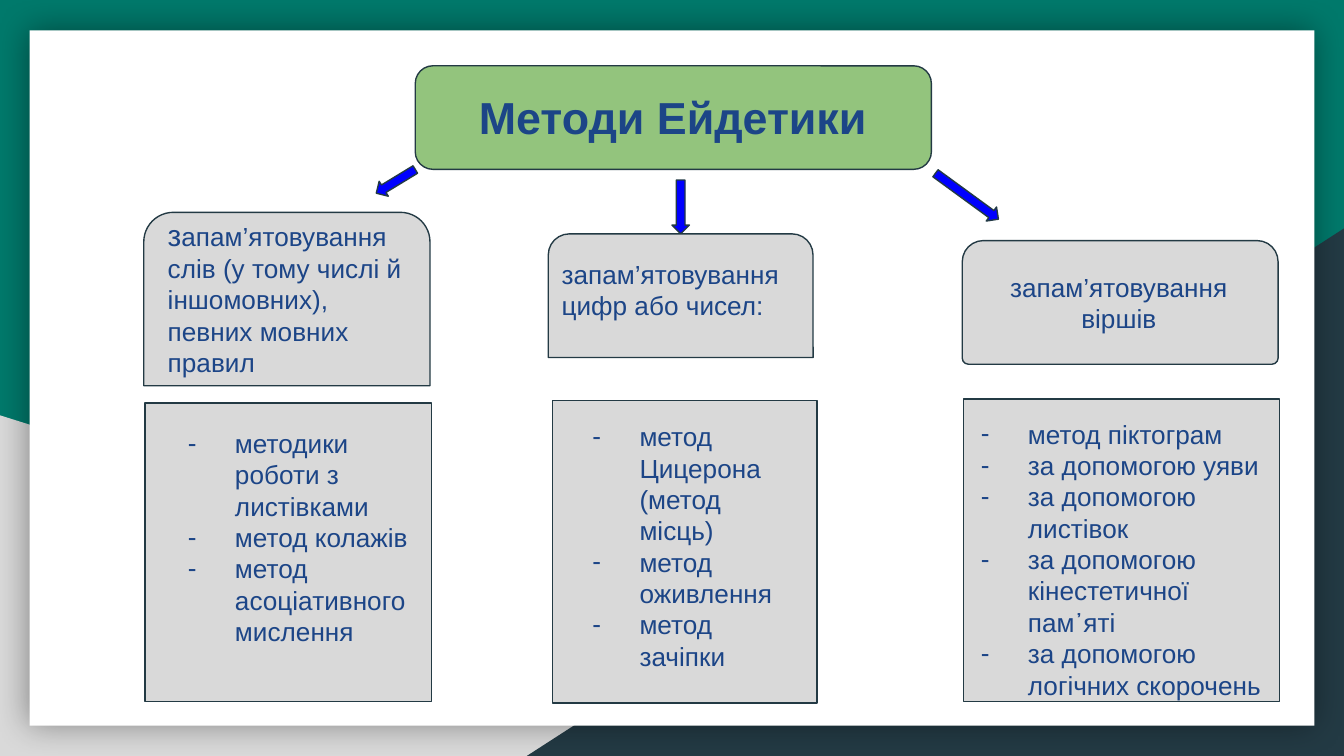
from dataclasses import dataclass

from lxml import etree
from pptx import Presentation
from pptx import util as u
from pptx.dml.color import RGBColor
from pptx.enum import shapes, text
from pptx.oxml.ns import qn


@dataclass(frozen=True)
class Theme:
    back: str = "00796B"
    dark: str = "233A44"
    gray: str = "D9D9D9"
    page: str = "FFFFFF"
    head: str = "93C47D"
    arrow: str = "0000FF"
    ink: str = "1C4587"
    font: str = "Arial"
    title: int = 24
    big: int = 16
    body: int = 14
    edge: float = 0.75


look = Theme()
kind = shapes.MSO_SHAPE
left, mid = text.PP_ALIGN.LEFT, text.PP_ALIGN.CENTER

deck = Presentation()
deck.slide_width = u.Inches(10)
deck.slide_height = deck.slide_width * 9 // 16
cell = deck.slide_width / 100  # square grid, 100 columns wide
slide = deck.slides.add_slide(deck.slide_layouts[6])
slide.background.fill.solid()
slide.background.fill.fore_color.rgb = RGBColor.from_string(look.back)


def draw(form, area, fill, edge=True, adj=(), turn=0):
    """Add a filled shape; area is column, row, columns, rows."""
    shape = slide.shapes.add_shape(form, *(round(n * cell) for n in area))
    shape.shadow.inherit = False
    shape.fill.solid()
    shape.fill.fore_color.rgb = RGBColor.from_string(fill)
    if edge:
        shape.line.color.rgb = RGBColor.from_string(look.dark)
        shape.line.width = u.Pt(look.edge)
    else:
        shape.line.fill.background()
    for i, val in enumerate(adj):
        shape.adjustments[i] = val
    shape.rotation = turn
    return shape


def write(area, paras, align=left, bold=False, dash=False):
    """Add a text box; each paragraph is a list of (words, size) runs."""
    frame = slide.shapes.add_textbox(*(round(n * cell) for n in area)).text_frame
    frame.word_wrap = True
    frame.margin_left = frame.margin_right = round(cell)
    frame.margin_top = frame.margin_bottom = round(cell)
    for i, runs in enumerate(paras):
        para = frame.paragraphs[0] if i == 0 else frame.add_paragraph()
        para.alignment = align
        if dash:
            props = para._p.get_or_add_pPr()
            props.set("marL", str(round(5 * cell)))
            props.set("indent", str(round(-3.5 * cell)))
            tint = etree.SubElement(props, qn("a:buClr"))
            etree.SubElement(tint, qn("a:srgbClr"), val=look.ink)
            etree.SubElement(props, qn("a:buFont"), typeface=look.font)
            etree.SubElement(props, qn("a:buChar"), char="-")
        for words, size in runs:
            run = para.add_run()
            run.text = words
            run.font.name = look.font
            run.font.size = u.Pt(size)
            run.font.bold = bold
            run.font.color.rgb = RGBColor.from_string(look.ink)


# Backdrop and page
draw(kind.RIGHT_TRIANGLE, (0, 30.9, 80.6, 25.35), look.gray, edge=False)
wedge = draw(kind.RIGHT_TRIANGLE, (39.2, 17, 60.8, 39.25), look.dark, edge=False)
wedge._element.spPr.find(qn("a:xfrm")).set("flipH", "1")
page = draw(kind.RECTANGLE, (2.2, 2.25, 95.6, 51.75), look.page, edge=False)
glow = etree.SubElement(page._element.spPr.find(qn("a:effectLst")), qn("a:outerShdw"),
                        blurRad=str(u.Pt(18)), dist="0", algn="ctr", rotWithShape="0")
tone = etree.SubElement(glow, qn("a:srgbClr"), val="000000")
etree.SubElement(tone, qn("a:alpha"), val="40000")

# Title
draw(kind.ROUNDED_RECTANGLE, (30.9, 4.9, 38.4, 7.7), look.head, adj=(0.17,))
write((27.7, 5.7, 44.7, 9.2), [[("Методи Ейдетики", look.title)]], mid, bold=True)

# Arrows to the three groups
for area, turn in (
    ((71.3, 11.7, 1.3, 5.8), 306.1),
    ((28.8, 11.8, 1.3, 3.4), 58.7),
    ((50, 13.4, 1.3, 4), 0),
):
    draw(kind.DOWN_ARROW, area, look.arrow, adj=(0.5, 0.5), turn=turn)

# Groups: head box, lower corners, head text area, runs, alignment,
# list box, list text area, items
groups = (
    ((10.7, 15.8, 21.3, 12.9), 0, (11.5, 15.1, 19.7, 9.2),
     [("з", look.big),
      ("апам’ятовування слів (у тому числі й іншомовних), певних мовних правил",
       look.body)], left,
     (10.8, 30, 21.3, 22.2), (11.5, 30.8, 20.8, 20.6),
     ("методики роботи з листівками", "метод колажів",
      "метод асоціативного мислення")),
    ((40.8, 17.4, 19.7, 9.2), 0, (40.8, 18.2, 23.5, 6.6),
     [("запам’ятовування цифр або чисел:", look.body)], left,
     (41.1, 29.8, 19.7, 22.5), (41.6, 30.3, 18.9, 20.6),
     ("метод Цицерона (метод місць)", "метод оживлення", "метод зачіпки")),
    ((71.6, 17.9, 23.5, 9.2), 0.05, (72.1, 19.2, 22.3, 6.6),
     [("запам’ятовування віршів", look.body)], mid,
     (71.7, 29.7, 23.5, 22.5), (70.5, 30.1, 25.9, 20.6),
     ("метод піктограм", "за допомогою уяви", "за допомогою листівок",
      "за допомогою кінестетичної пам᾽яті", "за допомогою логічних скорочень")),
)
for head, low, spot, runs, align, panel, place, items in groups:
    draw(kind.ROUND_2_SAME_RECTANGLE, head, look.gray, adj=(0.17, low))
    write(spot, [runs], align)
    draw(kind.RECTANGLE, panel, look.gray)
    write(place, [[(item, look.body)] for item in items], dash=True)

deck.save("out.pptx")
